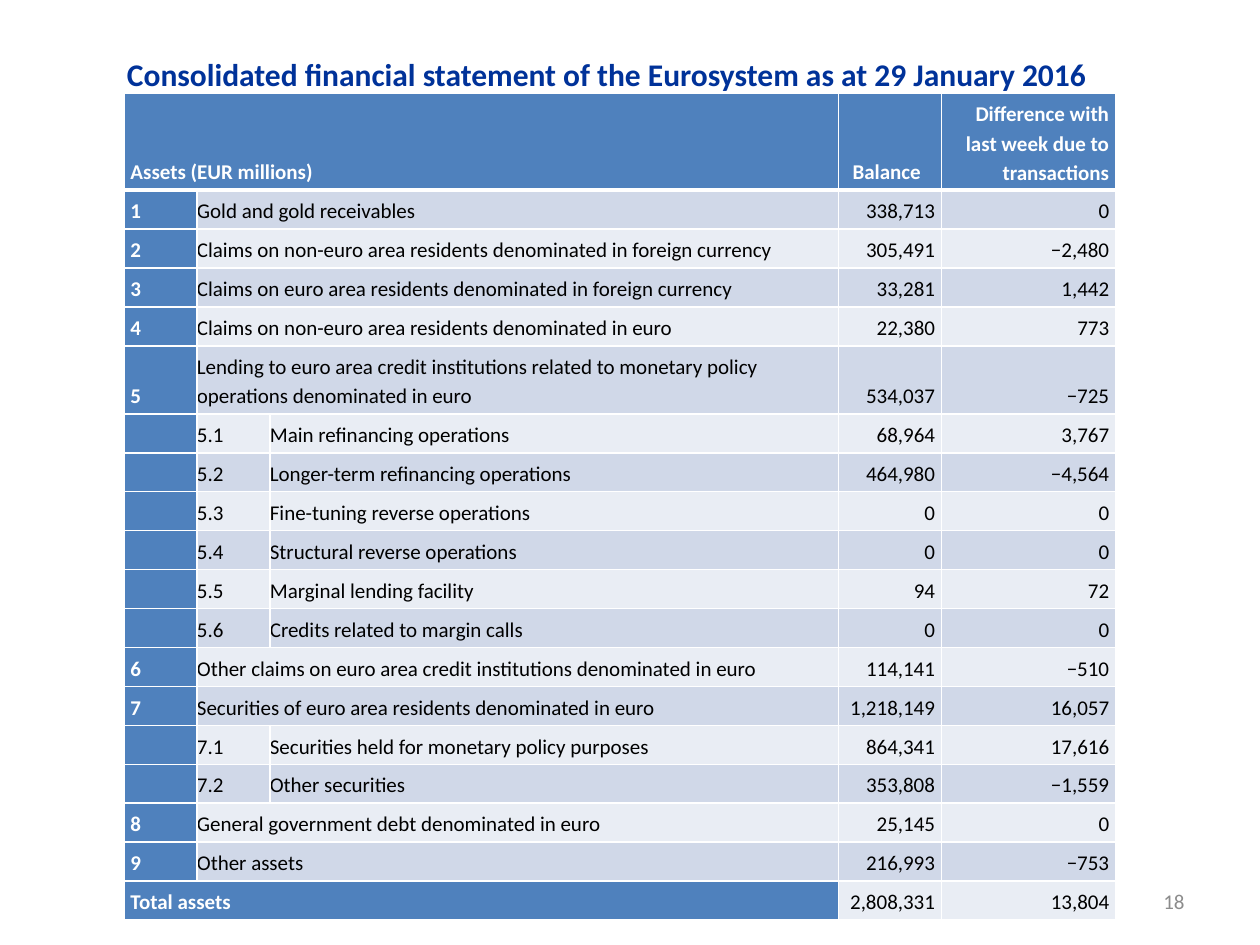
from dataclasses import dataclass

from lxml import etree
from pptx import Presentation
from pptx.dml.color import RGBColor
from pptx.enum import text
from pptx.oxml.ns import qn
from pptx.util import Cm, Pt

LEFT, CENTER, RIGHT = text.PP_ALIGN.LEFT, text.PP_ALIGN.CENTER, text.PP_ALIGN.RIGHT


@dataclass(frozen=True)
class Theme:
    font: str = "Calibri"
    title_size: int = 18
    body_size: int = 12
    title: str = "003299"
    page_number: str = "8C8C8C"
    header: str = "4F81BD"
    bands: tuple = ("D0D8E8", "E9EDF4")
    ink: str = "000000"
    white: str = "FFFFFF"
    rule: int = 1
    header_rule: int = 3


THEME = Theme()

TITLE = "Consolidated financial statement of the Eurosystem as at 29\u00a0January\u00a02016"
HEADINGS = ("Assets (EUR millions)", "Balance", "Difference with last week due to transactions")
ASSETS = [
    ("1", "Gold and gold receivables", "338,713", "0"),
    ("2", "Claims on non-euro area residents denominated in foreign currency", "305,491", "−2,480"),
    ("3", "Claims on euro area residents denominated in foreign currency", "33,281", "1,442"),
    ("4", "Claims on non-euro area residents denominated in euro", "22,380", "773"),
    ("5", "Lending to euro area credit institutions related to monetary policy "
          "operations denominated in euro", "534,037", "−725"),
    ("5.1", "Main refinancing operations", "68,964", "3,767"),
    ("5.2", "Longer-term refinancing operations", "464,980", "−4,564"),
    ("5.3", "Fine-tuning reverse operations", "0", "0"),
    ("5.4", "Structural reverse operations", "0", "0"),
    ("5.5", "Marginal lending facility", "94", "72"),
    ("5.6", "Credits related to margin calls", "0", "0"),
    ("6", "Other claims on euro area credit institutions denominated in euro", "114,141", "−510"),
    ("7", "Securities of euro area residents denominated in euro", "1,218,149", "16,057"),
    ("7.1", "Securities held for monetary policy purposes", "864,341", "17,616"),
    ("7.2", "Other securities", "353,808", "−1,559"),
    ("8", "General government debt denominated in euro", "25,145", "0"),
    ("9", "Other assets", "216,993", "−753"),
]
TOTAL = ("Total assets", "2,808,331", "13,804")

COLUMN_WIDTHS = (1.47, 1.47, 11.46, 2.08, 3.51)
HEADER_HEIGHT, ROW_HEIGHT, TWO_LINE_HEIGHT, TOTAL_HEIGHT = 1.85, 0.74, 1.3, 0.36
TWO_LINE_CODE = "5"


def write(frame, words, size=THEME.body_size, color=THEME.ink, bold=False,
          align=LEFT, line_spacing=None, space_after=None):
    paragraph = frame.paragraphs[0]
    paragraph.alignment = align
    paragraph.line_spacing = line_spacing
    if space_after is not None:
        paragraph.space_after = Pt(space_after)
    run = paragraph.add_run()
    run.text = words
    run.font.name, run.font.size, run.font.bold = THEME.font, Pt(size), bold
    run.font.color.rgb = RGBColor.from_string(color)


def add_text_box(slide, left, top, width, height, words, anchor, **style):
    frame = slide.shapes.add_textbox(Cm(left), Cm(top), Cm(width), Cm(height)).text_frame
    frame.word_wrap = True
    frame.vertical_anchor = anchor
    write(frame, words, **style)


def add_border(cell, side, points):
    line = etree.SubElement(cell._tc.get_or_add_tcPr(), qn(f"a:ln{side}"), w=str(Pt(points)))
    fill = etree.SubElement(line, qn("a:solidFill"))
    etree.SubElement(fill, qn("a:srgbClr"), val=THEME.white)


def prepare_cell(cell, row, column, fill):
    """Set borders, fill, margins and the height of an empty line."""
    for side in "LRTB":
        under_header = (row, side) in ((0, "B"), (1, "T"))
        add_border(cell, side, THEME.header_rule if under_header else THEME.rule)
    cell.fill.solid()
    cell.fill.fore_color.rgb = RGBColor.from_string(fill)
    cell.margin_left = Cm(0 if column else 0.13)
    cell.margin_right = Cm(0.13)
    cell.margin_top = cell.margin_bottom = Cm(0.1)
    cell.vertical_anchor = text.MSO_ANCHOR.BOTTOM
    empty_line = cell.text_frame.paragraphs[0]._p.get_or_add_endParaRPr()
    empty_line.set("sz", str(THEME.body_size * 100))


def fill_row(table, row, entries, spans, heading_columns, aligns, **style):
    """Write entries by column; spans is the first and last column to merge."""
    for column in range(len(COLUMN_WIDTHS)):
        fill = THEME.header if column in heading_columns else THEME.bands[(row - 1) % 2]
        prepare_cell(table.cell(row, column), row, column, fill)
    if spans:
        table.cell(row, spans[0]).merge(table.cell(row, spans[1]))
    for column, words in entries.items():
        heading = column in heading_columns
        write(table.cell(row, column).text_frame, words, bold=heading,
              color=THEME.white if heading else THEME.ink,
              align=aligns.get(column, LEFT), line_spacing=1.15, **style)


def add_statement(slide, left, top):
    heights = [HEADER_HEIGHT]
    heights += [TWO_LINE_HEIGHT if asset[0] == TWO_LINE_CODE else ROW_HEIGHT for asset in ASSETS]
    heights.append(TOTAL_HEIGHT)
    table = slide.shapes.add_table(
        len(heights), len(COLUMN_WIDTHS), Cm(left), Cm(top),
        Cm(sum(COLUMN_WIDTHS)), Cm(sum(heights))).table
    table.first_row = table.horz_banding = False
    for column, width in zip(table.columns, COLUMN_WIDTHS):
        column.width = Cm(width)
    for row, height in zip(table.rows, heights):
        row.height = Cm(height)

    figures = {3: RIGHT, 4: RIGHT}
    fill_row(table, 0, dict(zip((0, 3, 4), HEADINGS)), (0, 2), range(5), {3: CENTER, 4: RIGHT})
    for row, (code, label, balance, difference) in enumerate(ASSETS, start=1):
        is_sub_item = "." in code
        columns = (1, 2, 3, 4) if is_sub_item else (0, 1, 3, 4)
        entries = dict(zip(columns, (code, label, balance, difference)))
        fill_row(table, row, entries, None if is_sub_item else (1, 2), (0,), figures)
    fill_row(table, len(heights) - 1, dict(zip((0, 3, 4), TOTAL)), (0, 2), range(3),
             figures, space_after=6)


def main():
    deck = Presentation()
    deck.slide_width, deck.slide_height = Cm(25.4), Cm(19.05)
    slide = deck.slides.add_slide(deck.slide_layouts[6])
    add_text_box(slide, 18.2, 17.66, 5.93, 1.01, "18", text.MSO_ANCHOR.MIDDLE,
                 color=THEME.page_number, align=RIGHT)
    add_statement(slide, 2.5, 1.88)
    add_text_box(slide, 2.31, 0.99, 21.8, 1.8, TITLE, text.MSO_ANCHOR.TOP,
                 size=THEME.title_size, color=THEME.title, bold=True)
    deck.save("out.pptx")


if __name__ == "__main__":
    main()
